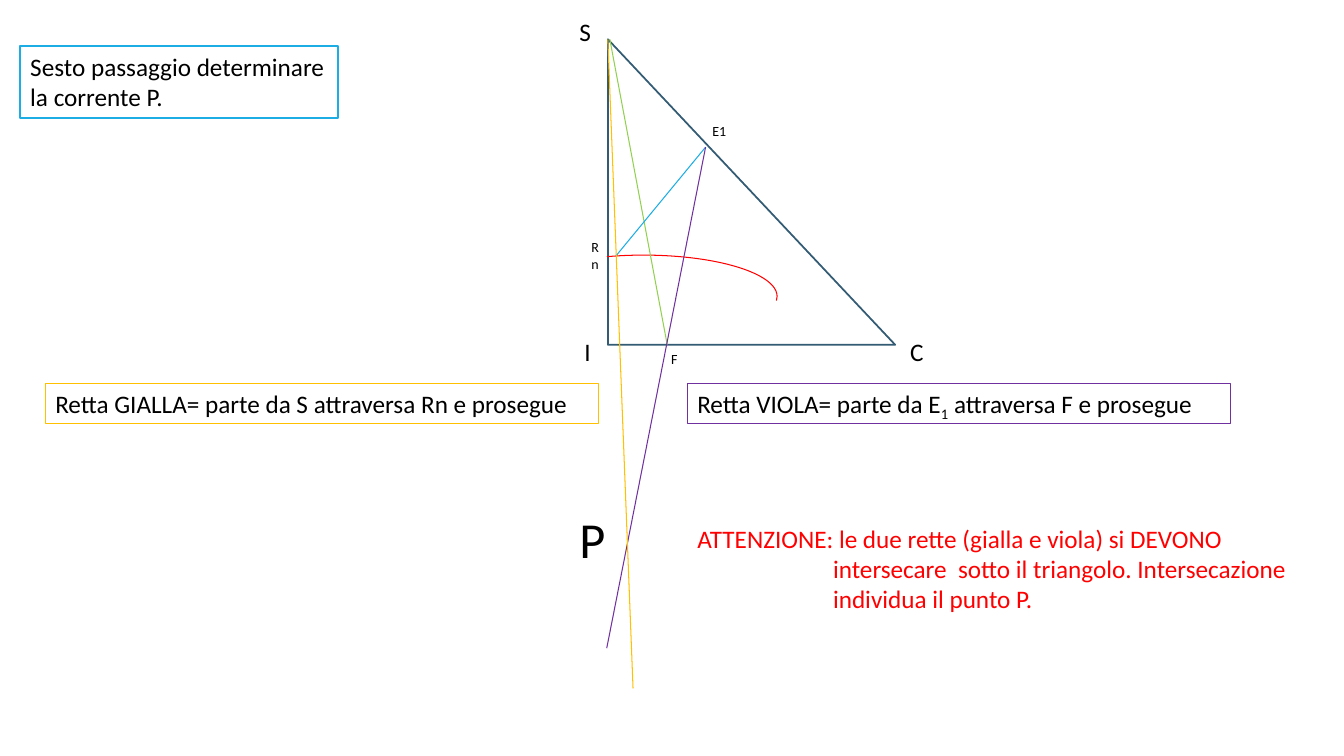
from dataclasses import dataclass

from lxml.etree import SubElement
from pptx import Presentation
from pptx.dml.color import RGBColor
from pptx.enum.shapes import MSO_CONNECTOR as Connector, MSO_SHAPE as Preset
from pptx.enum.text import MSO_ANCHOR as Anchor, MSO_AUTO_SIZE as AutoSize, PP_ALIGN as Align
from pptx.oxml.ns import qn
from pptx.util import Pt


@dataclass(frozen=True)
class Theme:
    font: str = "Calibri"
    black: str = "000000"
    white: str = "FFFFFF"
    slate: str = "335B74"
    blue: str = "1CADE4"
    green: str = "92D050"
    red: str = "FF0000"
    violet: str = "7030A0"
    yellow: str = "FFC000"
    body: int = 18
    small: int = 10
    large: int = 36
    thin: float = 0.75
    thick: float = 1.25


THEME = Theme()

POINT_S = (434.2, 28.1)
POINT_E1 = (504, 105.1)
POINT_RN = (439.9, 182.9)
POINT_F = (476.6, 246.2)


def style_line(line, color, width):
    line.color.rgb = RGBColor.from_string(color)
    line.width = Pt(width)


def write_text(shape, text, size=THEME.body, color=THEME.black):
    frame = shape.text_frame
    frame.text = text
    frame.word_wrap = True
    frame.auto_size = AutoSize.NONE
    frame.vertical_anchor = Anchor.TOP
    for paragraph in frame.paragraphs:
        paragraph.alignment = Align.LEFT
        for run in paragraph.runs:
            run.font.name = THEME.font
            run.font.size = Pt(size)
            run.font.color.rgb = RGBColor.from_string(color)


def add_title(slide, text, box):
    title = slide.shapes.title
    title.left, title.top, title.width, title.height = map(Pt, box)
    title.fill.solid()
    title.fill.fore_color.rgb = RGBColor.from_string(THEME.white)
    style_line(title.line, THEME.blue, THEME.thick)
    write_text(title, text)


def add_outline(slide, preset, box, color, width=THEME.thin):
    """Add an unfilled preset shape."""
    shape = slide.shapes.add_shape(preset, *map(Pt, box))
    shape.shadow.inherit = False
    shape.fill.background()
    style_line(shape.line, color, width)
    return shape


def add_text(slide, text, box, size=THEME.body, color=THEME.black):
    shape = slide.shapes.add_textbox(*map(Pt, box))
    write_text(shape, text, size, color)
    return shape


def add_line(slide, start, end, color):
    line = slide.shapes.add_connector(Connector.STRAIGHT, *map(Pt, start + end))
    style_line(line.line, color, THEME.thin)
    SubElement(line._element.spPr, qn("a:effectLst"))


def add_caption(slide, text, box, color):
    caption = add_outline(slide, Preset.RECTANGLE, box, color)
    write_text(caption, text)
    return caption


def lower_run(run):
    """Turn a run into a subscript."""
    run.font._element.set("baseline", "-25000")


def add_triangle(slide):
    add_outline(slide, Preset.RIGHT_TRIANGLE, POINT_S + (205.2, 218.2), THEME.slate, THEME.thick)
    arc = add_outline(slide, Preset.ARC, (364.3, 182.2, 190.8, 59), THEME.red)
    for index, degrees in enumerate((227.25, 1.78)):
        arc.adjustments[index] = degrees * 0.6
    add_line(slide, (435.6, 28.1), POINT_F, THEME.green)
    add_line(slide, POINT_RN, POINT_E1, THEME.blue)
    add_line(slide, POINT_E1, (433.4, 463), THEME.violet)
    add_line(slide, POINT_S, (452.2, 491.8), THEME.yellow)


def add_labels(slide):
    labels = [
        ("S", 406.8, 7.9, 24, 29, THEME.body),
        ("I", 410.4, 236.9, 19, 29, THEME.body),
        ("C", 643, 236.9, 25.2, 29, THEME.body),
        ("F", 472.3, 247, 19, 19.4, THEME.small),
        ("Rn", 415.4, 167, 23.8, 19.4, THEME.small),
        ("E1", 501.8, 84.2, 26, 19.4, THEME.small),
        ("P", 406.8, 359.3, 41, 50.4, THEME.large),
    ]
    for text, left, top, width, height, size in labels:
        add_text(slide, text, (left, top, width, height), size)


def add_warning(slide):
    lines = [
        "ATTENZIONE: le due rette (gialla e viola) si DEVONO",
        "intersecare  sotto il triangolo. Intersecazione",
        "individua il punto P.",
    ]
    warning = add_text(slide, "\n".join(lines), (491, 370, 440, 72.7), color=THEME.red)
    for paragraph in warning.text_frame.paragraphs[1:]:
        paragraph._p.get_or_add_pPr().set("marL", str(Pt(97)))


def main():
    presentation = Presentation()
    presentation.slide_width, presentation.slide_height = Pt(960), Pt(540)
    slide = presentation.slides.add_slide(presentation.slide_layouts[5])

    add_title(slide, "Sesto passaggio determinare\nla corrente P.", (14.4, 33.1, 226.8, 51.1))
    add_triangle(slide)
    add_labels(slide)

    add_caption(slide, "Retta GIALLA= parte da S attraversa Rn e prosegue",
                (32.4, 273.6, 395.3, 29), THEME.yellow)
    violet = add_caption(slide, "Retta VIOLA= parte da E", (491, 273.6, 388, 29), THEME.violet)
    paragraph = violet.text_frame.paragraphs[0]
    for text in ("1", " attraversa F e prosegue"):
        run = paragraph.add_run()
        run.text = text
        run.font.name = THEME.font
        run.font.size = Pt(THEME.body)
        run.font.color.rgb = RGBColor.from_string(THEME.black)
    lower_run(paragraph.runs[1])

    add_warning(slide)
    presentation.save("out.pptx")


if __name__ == "__main__":
    main()
